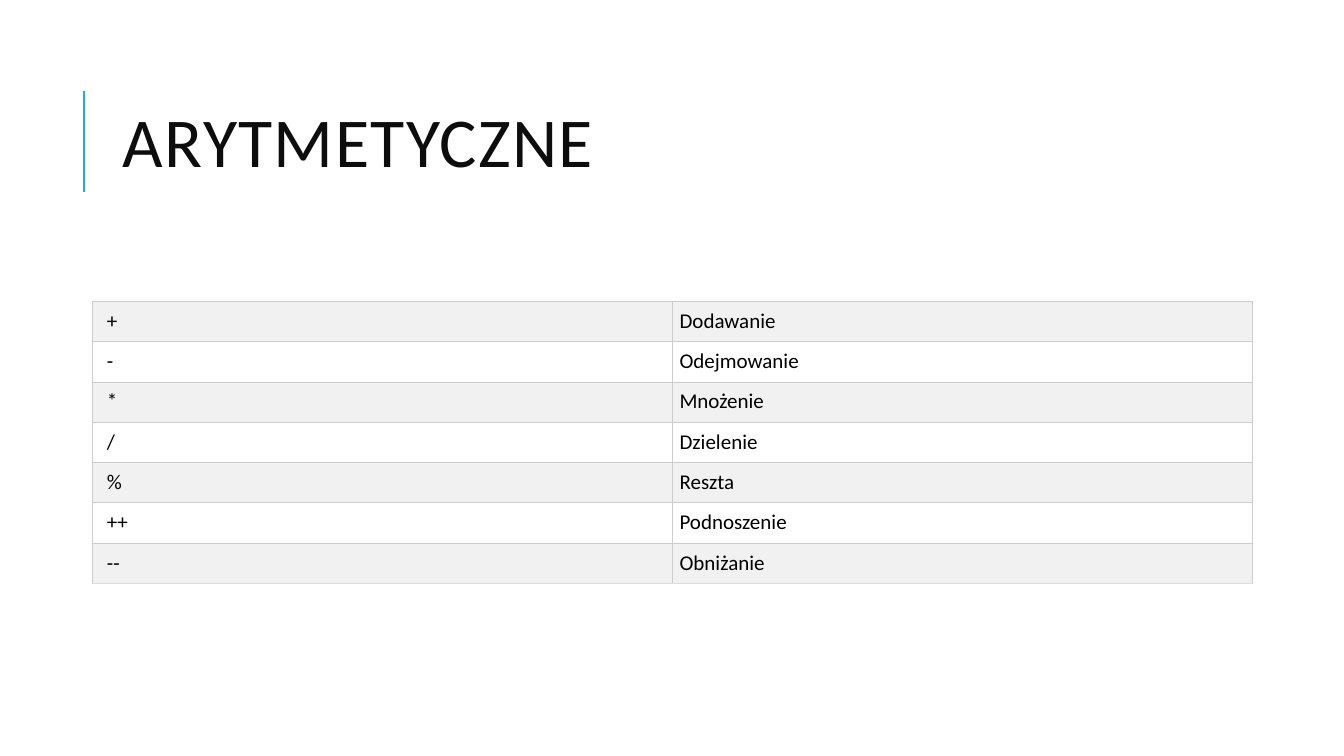
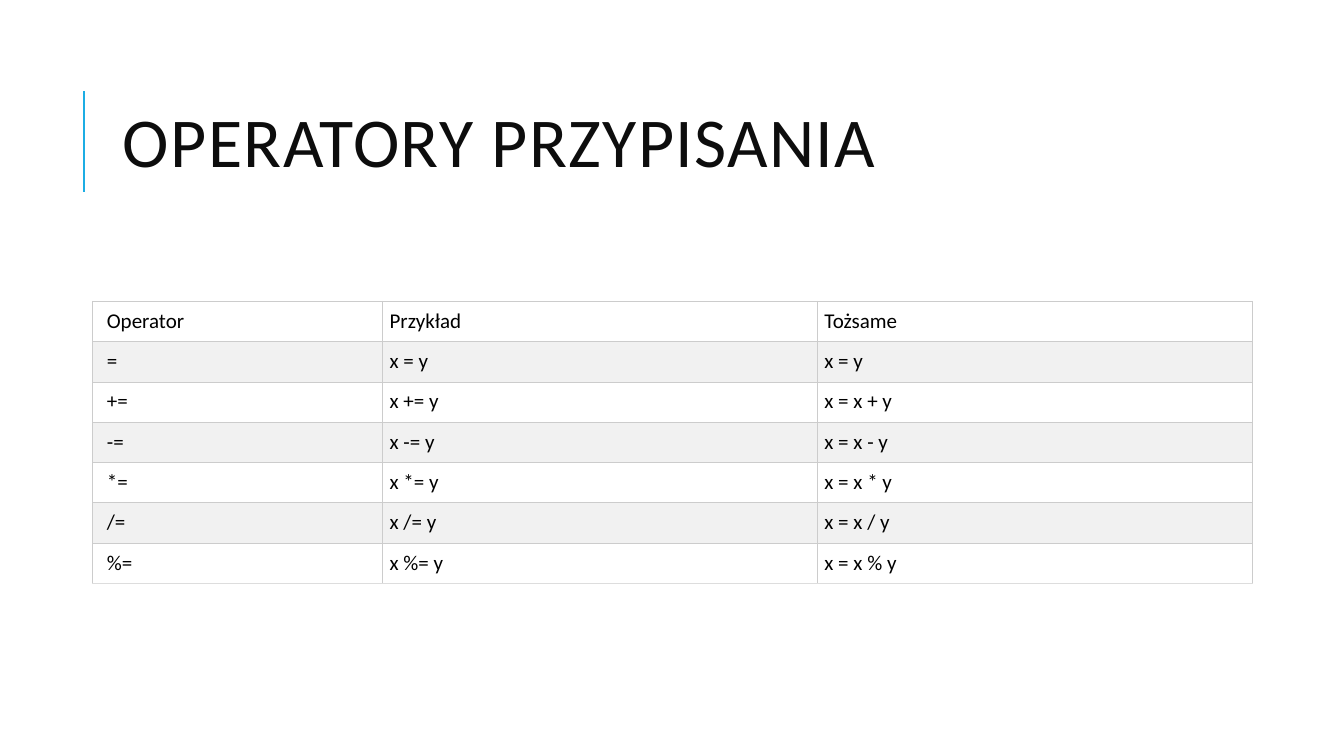
import lxml.etree
import pptx
import pptx.dml.color
import pptx.enum.shapes
import pptx.enum.text
import pptx.oxml.ns
import pptx.util

Inches = pptx.util.Inches
Pt = pptx.util.Pt
qn = pptx.oxml.ns.qn

FONT = "Calibri"
COLORS = {
    "accent": "1CADE4",
    "title": "0D0D0D",
    "text": "000000",
    "band": "F1F1F1",
    "plain": "FFFFFF",
    "grid": "CCCCCC",
    "base": "DDDDDD",
}
HEAD = (0.83, 0.64, 10.92, 1.64)
BODY = (0.92, 2.99, 11.5, 2.8)

MATH = [
    ("+", "Dodawanie"),
    ("-", "Odejmowanie"),
    ("*", "Mnożenie"),
    ("/", "Dzielenie"),
    ("%", "Reszta"),
    ("++", "Podnoszenie"),
    ("--", "Obniżanie"),
]
ASSIGN = [("Operator", "Przykład", "Tożsame"), ("=", "x = y", "x = y")] + [
    (f"{sign}=", f"x {sign}= y", f"x = x {sign} y") for sign in "+-*/%"
]


def color(name):
    return pptx.dml.color.RGBColor.from_string(COLORS[name])


def write(frame, text, size=15, tint="text", gap=None, lead=None):
    para = frame.paragraphs[0]
    if lead:
        para.line_spacing = lead
    run = para.add_run()
    run.text = text
    run.font.name = FONT
    run.font.size = Pt(size)
    run.font.color.rgb = color(tint)
    if gap:
        run.font._element.set("spc", str(gap * 100))


def border(cell, base):
    props = cell._tc.get_or_add_tcPr()
    for side in "LRTB":
        edge = lxml.etree.SubElement(props, qn(f"a:ln{side}"), w=str(Pt(0.75)))
        fill = lxml.etree.SubElement(edge, qn("a:solidFill"))
        tint = base if side == "B" else "grid"
        lxml.etree.SubElement(fill, qn("a:srgbClr"), val=COLORS[tint])


def header(slide, box, text):
    left, top, width, height = box
    rule = slide.shapes.add_connector(
        pptx.enum.shapes.MSO_CONNECTOR.STRAIGHT,
        Inches(left), Inches(top + 1.26), Inches(left), Inches(top + 0.26),
    )
    rule.line.color.rgb = color("accent")
    rule.line.width = Pt(1.5)
    lxml.etree.SubElement(rule._element.spPr, qn("a:effectLst"))

    inset = 0.29
    title = slide.shapes.add_textbox(
        Inches(left + inset), Inches(top), Inches(width - inset), Inches(height)
    )
    frame = title.text_frame
    frame.word_wrap = True
    frame.vertical_anchor = pptx.enum.text.MSO_ANCHOR.MIDDLE
    write(frame, text, size=50, tint="title", gap=1, lead=0.8)


def grid(slide, box, rows, parts, first):
    left, top, width, height = box
    table = slide.shapes.add_table(
        len(rows), len(parts), *(Inches(size) for size in box)
    ).table
    table.first_row = False
    table.horz_banding = False
    for column, part in zip(table.columns, parts):
        column.width = Inches(width * part / sum(parts))
    for r, texts in enumerate(rows):
        table.rows[r].height = Inches(height / len(rows))
        for c, text in enumerate(texts):
            cell = table.cell(r, c)
            cell.margin_left = Inches(0.07 if c else 0.14)
            cell.margin_right = cell.margin_top = cell.margin_bottom = Inches(0.07)
            border(cell, "base" if r == len(rows) - 1 else "grid")
            cell.fill.solid()
            cell.fill.fore_color.rgb = color("band" if r % 2 == first else "plain")
            write(cell.text_frame, text)


def main():
    deck = pptx.Presentation()
    deck.slide_width = Inches(13.33)
    deck.slide_height = Inches(7.5)
    for title, rows, parts, first in (
        ("ARYTMETYCZNE", MATH, (1, 1), 0),
        ("OPERATORY PRZYPISANIA", ASSIGN, (2, 3, 3), 1),
    ):
        slide = deck.slides.add_slide(deck.slide_layouts[6])
        header(slide, HEAD, title)
        grid(slide, BODY, rows, parts, first)
    deck.save("out.pptx")


if __name__ == "__main__":
    main()
